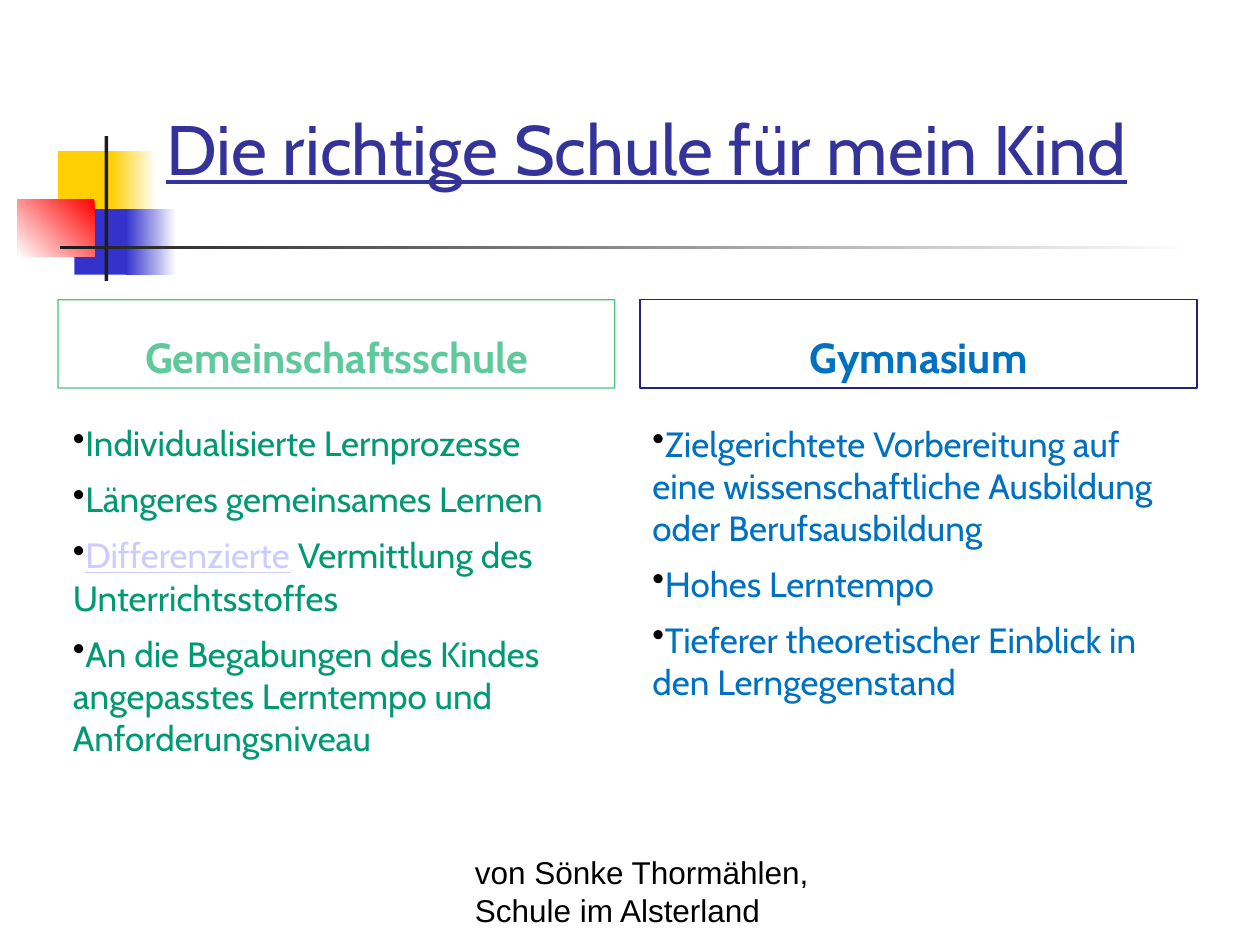
from lxml import etree
from pptx import Presentation
from pptx.dml.color import RGBColor
from pptx.enum import shapes, text
from pptx.oxml import ns
from pptx.util import Pt

PX = 9144
HUES = {
    "gold": "FFCF01", "blue": "3333CC", "red": "FF0000", "white": "FFFFFF",
    "ink": "1C1C1C", "title": "333399", "mint": "60C99C", "green": "009973",
    "leaf": "00B050", "navy": "22228B", "sky": "0070C0", "link": "CCCCFF",
    "black": "000000",
}
HEAD = {"size": Pt(24), "name": "Cabin", "bold": True}
BODY = {"size": Pt(20), "name": "Cabin"}
TITLE = {"size": Pt(40), "name": "Cabin", "underline": True}
FOOT = {"size": Pt(18), "name": "Arial"}
LEFT = [
    [("Individualisierte Lernprozesse", "green")],
    [("Längeres gemeinsames Lernen", "green")],
    [("Differenzierte", "link"), (" Vermittlung des Unterrichtsstoffes", "green")],
    [("An die Begabungen des Kindes angepasstes Lerntempo und Anforderungsniveau", "green")],
]
RIGHT = [
    [("Zielgerichtete Vorbereitung auf eine wissenschaftliche Ausbildung "
      "oder Berufsausbildung", "sky")],
    [("Hohes Lerntempo", "sky")],
    [("Tieferer theoretischer Einblick in den Lerngegenstand", "sky")],
]


def hue(name):
    """Return the named colour."""
    return RGBColor.from_string(HUES[name])


def style(obj, form):
    """Set every attribute held in a format dict."""
    for key, val in form.items():
        setattr(obj, key, val)


def rect(slide, box):
    """Add a plain rectangle without shadow."""
    shape = slide.shapes.add_shape(
        shapes.MSO_SHAPE.RECTANGLE, *(n * PX for n in box))
    shape.shadow.inherit = False
    return shape


def block(slide, box, tones, angle=180):
    """Add a borderless block in one tone or fading between two."""
    shape = rect(slide, box)
    shape.line.fill.background()
    if len(tones) == 1:
        shape.fill.solid()
        shape.fill.fore_color.rgb = hue(tones[0])
        return
    shape.fill.gradient()
    shape.fill.gradient_angle = angle
    for stop, tone in zip(shape.fill.gradient_stops, tones):
        stop.color.rgb = hue(tone)


def crest(slide, box):
    """Place the coloured squares and the crossing bars."""
    x, y, wide, high = box
    block(slide, (x + 32, y + 12, 48, 52), ["gold"])
    block(slide, (x + 74, y + 12, 36, 52), ["white", "gold"])
    block(slide, (x + 45, y + 58, 46, 52), ["blue"])
    block(slide, (x + 86, y + 58, 40, 52), ["white", "blue"])
    block(slide, (x, y + 50, 61, 46), ["red", "white"], 225)
    block(slide, (x + 69, y, 3, high), ["ink"])
    block(slide, (x + 34, y + 87, wide - 34, 3), ["white", "ink"])


def write(shape, paras, form, base="TOP", side="LEFT", gap=0):
    """Fill a shape with paragraphs of coloured runs."""
    frame = shape.text_frame
    style(frame, {"word_wrap": True,
                  "vertical_anchor": getattr(text.MSO_ANCHOR, base)})
    for i, runs in enumerate(paras):
        para = frame.add_paragraph() if i else frame.paragraphs[0]
        style(para, {"alignment": getattr(text.PP_ALIGN, side),
                     "space_before": Pt(gap)})
        for words, tone in runs:
            run = para.add_run()
            run.text = words
            style(run.font, form)
            run.font.color.rgb = hue(tone)
            if tone == "link":
                run.font.underline = True
    return frame


def label(slide, box, paras, form, **opts):
    """Add a text box holding the given paragraphs."""
    shape = slide.shapes.add_textbox(*(n * PX for n in box))
    return write(shape, paras, form, **opts)


def dot(para):
    """Give a paragraph a black bullet without indent."""
    props = para._p.get_or_add_pPr()
    style_map = {"marL": "0", "indent": "0"}
    for key, val in style_map.items():
        props.set(key, val)
    tint = etree.SubElement(props, ns.qn("a:buClr"))
    etree.SubElement(tint, ns.qn("a:srgbClr"), val=HUES["black"])
    etree.SubElement(props, ns.qn("a:buChar"), char="•")


def column(slide, box, name, tone, edge, items, inset=0, alpha=100):
    """Place a framed heading above its bullet list."""
    x, y, wide, high = box
    head = rect(slide, (x, y, wide, 70))
    head.fill.background()
    head.line.color.rgb = hue(edge)
    head.line.width = Pt(0.75)
    if alpha < 100:
        ink = head.line._ln.find(".//" + ns.qn("a:srgbClr"))
        etree.SubElement(ink, ns.qn("a:alpha"), val=str(alpha * 1000))
    write(head, [[(name, tone)]], HEAD, base="BOTTOM", side="CENTER", gap=8)
    frame = label(slide, (x + inset, y + 92, wide, high - 92), items, BODY, gap=8)
    for para in frame.paragraphs:
        dot(para)


def main():
    """Build and save the slide."""
    deck = Presentation()
    style(deck, {"slide_width": 1000 * PX, "slide_height": 750 * PX})
    slide = deck.slides.add_slide(deck.slide_layouts[6])
    crest(slide, (14, 108, 934, 115))
    label(slide, (122, 30, 828, 125),
          [[("Die richtige Schule für mein Kind", "title")]], TITLE, base="BOTTOM")
    column(slide, (46, 238, 442, 445), "Gemeinschaftsschule", "mint", "leaf",
           LEFT, inset=2, alpha=73)
    column(slide, (508, 238, 442, 434), "Gymnasium", "sky", "navy", RIGHT)
    label(slide, (367, 692, 316, 50),
          [[("von Sönke Thormählen, Schule im Alsterland", "black")]],
          FOOT, base="BOTTOM")
    deck.save("out.pptx")


if __name__ == "__main__":
    main()
